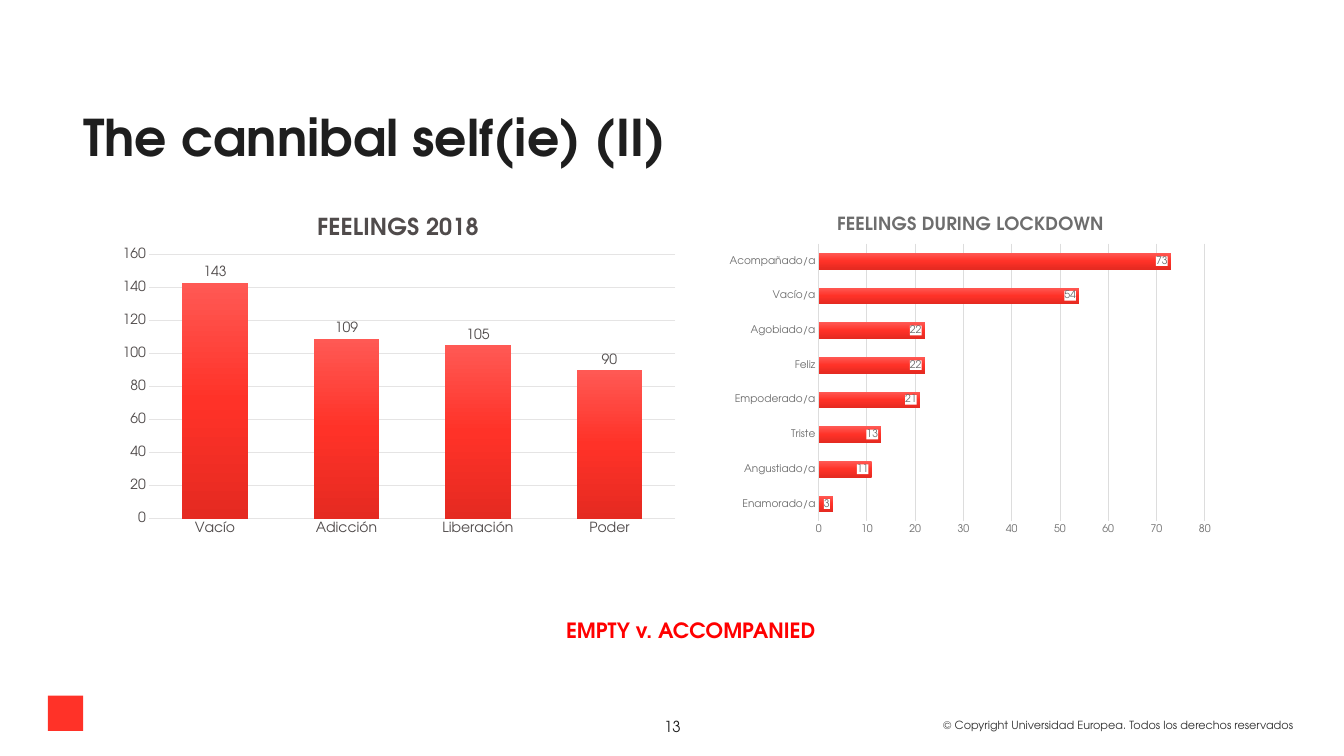
"""Build a slide comparing feelings about selfies in 2018 and during lockdown."""
from lxml.etree import SubElement
from pptx import Presentation
from pptx.chart.data import CategoryChartData
from pptx.dml.color import RGBColor
from pptx.enum.chart import XL_CHART_TYPE, XL_LABEL_POSITION, XL_TICK_MARK
from pptx.enum.shapes import MSO_SHAPE
from pptx.enum.text import PP_ALIGN
from pptx.oxml import parse_xml
from pptx.oxml.ns import nsdecls, qn
from pptx.util import Inches, Pt

FONT = "TeX Gyre Adventor"
INK = RGBColor(0x1E, 0x1E, 0x1E)
FOOTER_GREY = RGBColor(0x33, 0x33, 0x33)
BRIGHT_RED = RGBColor(0xFF, 0x00, 0x00)
SQUARE_RED = RGBColor(0xFF, 0x32, 0x28)
WARM_GREY = RGBColor(0x50, 0x4B, 0x4B)
MID_GREY = RGBColor(0x6D, 0x6D, 0x6D)
PALE_GREY = RGBColor(0xE5, 0xE4, 0xE4)
LINE_GREY = RGBColor(0xDD, 0xDD, 0xDD)
BAR_GRADIENT = [(0, "FF5954"), (50, "FF3228"), (100, "E52A21")]

TEXTS = [
    dict(text="© Copyright Universidad Europea. Todos los derechos reservados",
         at=(11.13, 8.5, 4.42, 0.26), wrap=False, align=PP_ALIGN.LEFT,
         font=dict(size=Pt(9.6)), color=FOOTER_GREY),
    dict(text="13", at=(7.66, 8.49, 0.69, 0.43), wrap=True, align=PP_ALIGN.CENTER,
         font=dict(size=Pt(13)), color=INK),
    dict(text="The cannibal self(ie) (II)", at=(0.99, 1.29, 7.18, 0.77), wrap=True,
         align=PP_ALIGN.LEFT, font=dict(size=Pt(43.3), bold=True), color=INK,
         frame=dict(margin_left=0), para=dict(line_spacing=0.9)),
    dict(text="EMPTY v. ACCOMPANIED", at=(6.64, 7.3, 4.36, 0.4), wrap=True,
         align=PP_ALIGN.LEFT, font=dict(size=Pt(18), bold=True), color=BRIGHT_RED),
]
CHARTS = [
    dict(title="FEELINGS 2018", title_size=20, kind=XL_CHART_TYPE.COLUMN_CLUSTERED,
         at=(1.31, 2.38, 6.86, 4.08), plot_area=(0.068, 0.16, 0.913, 0.77),
         data={"Vacío": 143, "Adicción": 109, "Liberación": 105, "Poder": 90},
         size=12, color=WARM_GREY, line=PALE_GREY, axis_width=0.75, top=160, step=20,
         plot=dict(gap_width=100, overlap=-24),
         labels=XL_LABEL_POSITION.OUTSIDE_END, label_fill=None),
    dict(title="FEELINGS DURING LOCKDOWN", title_size=15.5, kind=XL_CHART_TYPE.BAR_CLUSTERED,
         at=(8.57, 2.38, 5.97, 4.08), plot_area=(0.197, 0.128, 0.77, 0.81),
         data={"Enamorado/a": 3, "Angustiado/a": 11, "Triste": 13, "Empoderado/a": 21,
               "Feliz": 22, "Agobiado/a": 22, "Vacío/a": 54, "Acompañado/a": 73},
         size=9, color=MID_GREY, line=LINE_GREY, axis_width=1, top=80, step=10,
         plot=dict(gap_width=115, overlap=-20),
         labels=XL_LABEL_POSITION.INSIDE_END, label_fill="FFFFFF"),
]


def apply(target, values):
    for name, value in values.items():
        setattr(target, name, value)


def style_font(font, color, **values):
    apply(font, dict(name=FONT, **values))
    font.color.rgb = color


def add_text(page, item):
    box = page.shapes.add_textbox(*map(Inches, item["at"]))
    frame = box.text_frame
    apply(frame, dict(word_wrap=item["wrap"], **item.get("frame", {})))
    para = frame.paragraphs[0]
    apply(para, dict(alignment=item["align"], **item.get("para", {})))
    span = para.add_run()
    span.text = item["text"]
    style_font(span.font, item["color"], **item["font"])


def fill_with_gradient(series):
    series.format.fill.solid()
    solid = series.format.fill._xPr.find(qn("a:solidFill"))
    stops = "".join(f'<a:gs pos="{place * 1000}"><a:srgbClr val="{color}"/></a:gs>'
                    for place, color in BAR_GRADIENT)
    gradient = parse_xml(f'<a:gradFill {nsdecls("a")} rotWithShape="1"><a:gsLst>{stops}</a:gsLst>'
                         '<a:lin ang="5400000" scaled="0"/></a:gradFill>')
    solid.getparent().replace(solid, gradient)


def place_plot(chart, area):
    plot_area = chart._chartSpace.chart.plotArea
    for old in plot_area.findall(qn("c:layout")):
        plot_area.remove(old)
    layout = parse_xml(f'<c:layout {nsdecls("c")}/>')
    manual = SubElement(layout, qn("c:manualLayout"))
    settings = [("layoutTarget", "inner"), ("xMode", "edge"), ("yMode", "edge"),
                *zip("xywh", area)]
    for name, value in settings:
        SubElement(manual, qn(f"c:{name}")).set("val", str(value))
    plot_area.insert(0, layout)


def add_labels(series, item):
    labels = series.data_labels
    apply(labels, dict(show_value=True, position=item["labels"]))
    style_font(labels.font, item["color"], size=Pt(item["size"]))
    if item["label_fill"]:
        labels._element.find(qn("c:txPr")).addprevious(parse_xml(
            f'<c:spPr {nsdecls("c", "a")}><a:solidFill>'
            f'<a:srgbClr val="{item["label_fill"]}"/></a:solidFill></c:spPr>'))


def style_axes(chart, item):
    for axis in (chart.category_axis, chart.value_axis):
        apply(axis, dict(major_tick_mark=XL_TICK_MARK.NONE, minor_tick_mark=XL_TICK_MARK.NONE))
        style_font(axis.tick_labels.font, item["color"], size=Pt(item["size"]))
    apply(chart.value_axis, dict(minimum_scale=0, maximum_scale=item["top"],
                                 major_unit=item["step"], has_major_gridlines=True))
    chart.value_axis.format.line.fill.background()
    rules = [(chart.category_axis.format.line, item["axis_width"]),
             (chart.value_axis.major_gridlines.format.line, 0.75)]
    for line, width in rules:
        line.color.rgb = item["line"]
        line.width = Pt(width)


def add_feelings_chart(page, item):
    data = CategoryChartData()
    data.categories = list(item["data"])
    data.add_series("Series 1", list(item["data"].values()))
    chart = page.shapes.add_chart(item["kind"], *map(Inches, item["at"]), data).chart
    apply(chart, dict(has_legend=False, has_title=True))
    style_font(chart.font, INK, size=Pt(10))
    title = chart.chart_title
    title.include_in_layout = False
    span = title.text_frame.paragraphs[0].add_run()
    span.text = item["title"]
    style_font(span.font, item["color"], size=Pt(item["title_size"]), bold=True)
    plot = chart.plots[0]
    apply(plot, dict(vary_by_categories=False, **item["plot"]))
    fill_with_gradient(plot.series[0])
    add_labels(plot.series[0], item)
    style_axes(chart, item)
    place_plot(chart, item["plot_area"])


def main():
    deck = Presentation()
    apply(deck, dict(slide_width=Inches(16), slide_height=Inches(9)))
    page = deck.slides.add_slide(deck.slide_layouts[6])
    square = page.shapes.add_shape(MSO_SHAPE.RECTANGLE, *map(Inches, (0.57, 8.28, 0.42, 0.42)))
    square.shadow.inherit = False
    square.fill.solid()
    square.fill.fore_color.rgb = SQUARE_RED
    square.line.fill.background()
    for item in CHARTS:
        add_feelings_chart(page, item)
    for item in TEXTS:
        add_text(page, item)
    deck.save("out.pptx")


if __name__ == "__main__":
    main()
